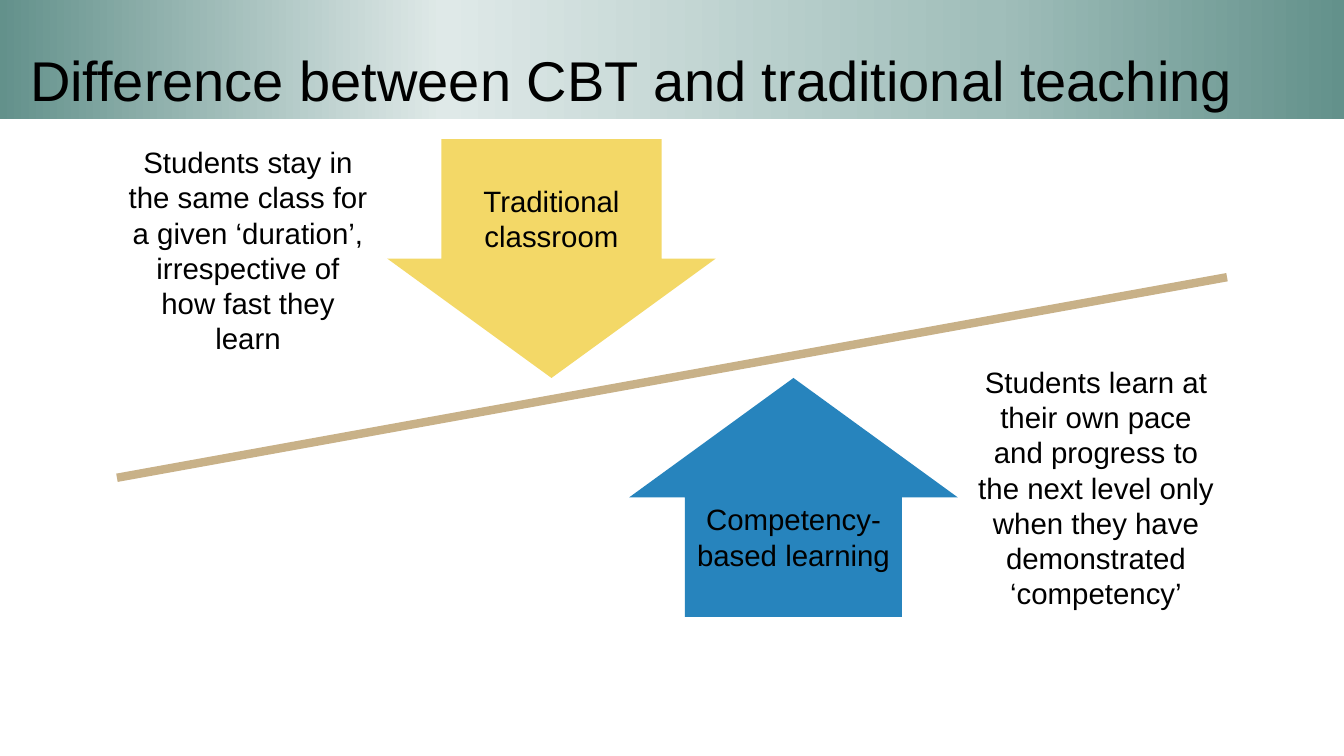
import copy
from dataclasses import dataclass

import pptx
import pptx.dml.color
import pptx.enum.shapes
import pptx.enum.text
import pptx.oxml.ns
import pptx.util
from lxml import etree

Inches = pptx.util.Inches
Shapes = pptx.enum.shapes.MSO_SHAPE
Anchor = pptx.enum.text.MSO_ANCHOR
Align = pptx.enum.text.PP_ALIGN


@dataclass(frozen=True)
class Theme:
    font: str = "Arial"
    text: str = "000000"
    title_size: int = 40
    body_size: int = 21
    divider: str = "C8B188"
    traditional: str = "F3D867"
    competency: str = "2784BD"
    banner: tuple = ((0, "63918B"), (33, "DFE9E8"), (74, "A0BEBA"), (100, "63918B"))


def rgb(value):
    return pptx.dml.color.RGBColor.from_string(value)


class SlideBuilder:
    def __init__(self, slide, theme):
        self.shapes = slide.shapes
        self.theme = theme

    def add_text(self, box, text, size=None, align=Align.CENTER, anchor=Anchor.MIDDLE,
                 line_spacing=None, left_margin=0):
        frame = box.text_frame
        frame.word_wrap = True
        frame.vertical_anchor = anchor
        para = frame.paragraphs[0]
        para.alignment = align
        if line_spacing:
            para.line_spacing = line_spacing
        if left_margin:
            para._p.get_or_add_pPr().set("marL", str(Inches(left_margin)))
        span = para.add_run()
        span.text = text
        span.font.name = self.theme.font
        span.font.size = pptx.util.Pt(size or self.theme.body_size)
        span.font.color.rgb = rgb(self.theme.text)

    def shape(self, kind, bounds):
        box = self.shapes.add_shape(kind, *map(Inches, bounds))
        box.shadow.inherit = False
        box.line.fill.background()
        return box

    def divider(self, start, end, width):
        line = self.shapes.add_connector(
            pptx.enum.shapes.MSO_CONNECTOR.STRAIGHT, *map(Inches, start + end))
        line.line.color.rgb = rgb(self.theme.divider)
        line.line.width = pptx.util.Pt(width)
        etree.SubElement(line._element.spPr, pptx.oxml.ns.qn("a:effectLst"))

    def banner(self, text, bounds):
        box = self.shape(Shapes.RECTANGLE, bounds)
        box.fill.gradient()
        box.fill.gradient_angle = 0
        self.set_stops(box, self.theme.banner)
        self.add_text(box, text, size=self.theme.title_size, align=Align.LEFT,
                      anchor=Anchor.BOTTOM, line_spacing=0.9, left_margin=0.2)

    def set_stops(self, box, stops):
        """Give the gradient one stop for each (percent, colour) pair."""
        stop_list = box._element.spPr.find(".//" + pptx.oxml.ns.qn("a:gsLst"))
        template = copy.deepcopy(stop_list[0])
        for stop in list(stop_list):
            stop_list.remove(stop)
        for _ in stops:
            stop_list.append(copy.deepcopy(template))
        for stop, (percent, colour) in zip(box.fill.gradient_stops, stops):
            stop.position = percent / 100
            stop.color.rgb = rgb(colour)

    def arrow(self, kind, text, bounds, colour, shaft):
        box = self.shape(kind, bounds)
        box.adjustments[0] = shaft
        box.adjustments[1] = 0.5
        box.fill.solid()
        box.fill.fore_color.rgb = rgb(colour)
        self.add_text(box, text)

    def description(self, text, bounds, anchor):
        box = self.shapes.add_textbox(*map(Inches, bounds))
        self.add_text(box, text, anchor=anchor)
        box.text_frame.auto_size = pptx.enum.text.MSO_AUTO_SIZE.SHAPE_TO_FIT_TEXT


def main():
    deck = pptx.Presentation()
    deck.slide_width, deck.slide_height = Inches(13.33), Inches(7.5)
    theme = Theme()
    page = SlideBuilder(deck.slides.add_slide(deck.slide_layouts[6]), theme)

    left, right = 1.16, 12.17
    top, middle = 1.38, 3.75
    arrow_size = (3.26, middle - top)
    description_width = 2.6

    page.divider((left, 4.74), (right, 2.75), width=6)
    page.banner("Difference between CBT and traditional teaching", (0, 0, 13.33, 1.18))
    page.arrow(Shapes.DOWN_ARROW, "Traditional classroom",
               (3.84, top, *arrow_size), theme.traditional, shaft=0.67)
    page.arrow(Shapes.UP_ARROW, "Competency-based learning",
               (6.24, middle, *arrow_size), theme.competency, shaft=0.66)
    page.description(
        "Students stay in the same class for a given ‘duration’, "
        "irrespective of how fast they learn",
        (left, top, description_width, 2.28), Anchor.TOP)
    page.description(
        "Students learn at their own pace and progress to the next level only "
        "when they have demonstrated ‘competency’",
        (right - description_width, 3.55, description_width, 2.57), Anchor.MIDDLE)
    deck.save("out.pptx")


if __name__ == "__main__":
    main()
